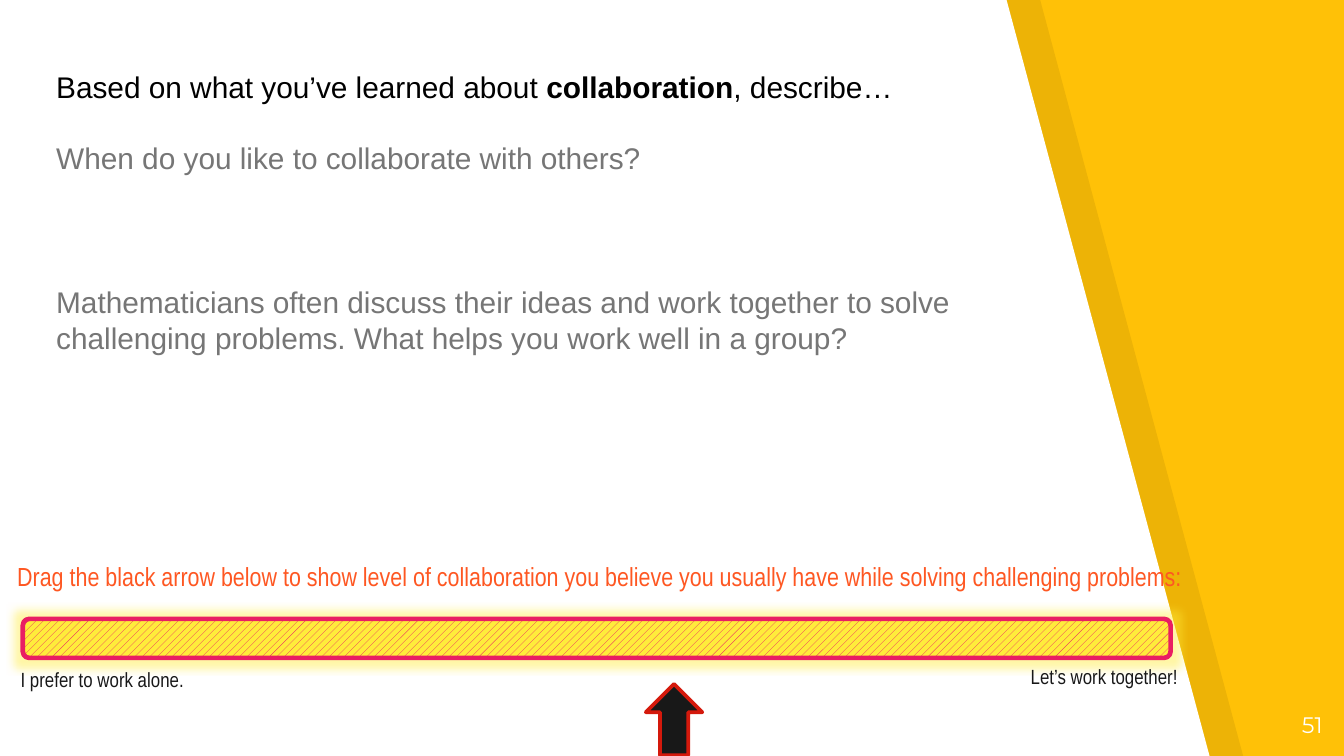
from dataclasses import dataclass

from lxml import etree
from pptx import Presentation
from pptx import util as u
from pptx.dml import color as dml_color
from pptx.enum import dml, shapes, text
from pptx.oxml import ns

# Grid: one column or row is a tenth of an inch
UNIT = u.Inches(0.1)
COLUMNS, ROWS = 100, 56.25


@dataclass(frozen=True)
class Theme:
    background: str = "FFC107"
    panel: str = "FFFFFF"
    shade: str = "000000"
    heading: str = "000000"
    question: str = "767676"
    label: str = "181818"
    instruction: str = "FE5722"
    scale_line: str = "E91E63"
    scale_fill: str = "FFEC3B"
    arrow_line: str = "D4190C"
    body_font: str = "Arial"
    narrow_font: str = "Arial Narrow"
    number_font: str = "Montserrat"
    body_size: int = 16
    instruction_size: int = 14
    number_size: int = 12
    label_size: int = 11


def rgb(value):
    return dml_color.RGBColor.from_string(value)


def grid(value):
    return u.Emu(round(value * UNIT))


def apply_format(target, values):
    for name, value in values.items():
        setattr(target, name, value)


def add_alpha(color_element, percent):
    alpha = etree.SubElement(color_element, ns.qn("a:alpha"))
    alpha.set("val", str(percent * 1000))


class SlideBuilder:
    def __init__(self, slide, theme):
        self.slide = slide
        self.theme = theme
        fill = slide.background.fill
        fill.solid()
        fill.fore_color.rgb = rgb(theme.background)

    def panel(self, points, color, opacity=100):
        start, *rest = [(grid(x), grid(y)) for x, y in points]
        builder = self.slide.shapes.build_freeform(*start)
        builder.add_line_segments(rest, close=True)
        shape = builder.convert_to_shape()
        shape.shadow.inherit = False
        shape.line.fill.background()
        shape.fill.solid()
        shape.fill.fore_color.rgb = rgb(color)
        if opacity < 100:
            add_alpha(shape._element.spPr.find(".//" + ns.qn("a:srgbClr")), opacity)

    def shape(self, kind, box, fill, line, width, pattern=None):
        shape = self.slide.shapes.add_shape(kind, *map(grid, box))
        shape.shadow.inherit = False
        if pattern:
            shape.fill.patterned()
            shape.fill.pattern = pattern
            shape.fill.fore_color.rgb = rgb(line)
            shape.fill.back_color.rgb = rgb(fill)
        else:
            shape.fill.solid()
            shape.fill.fore_color.rgb = rgb(fill)
        shape.line.color.rgb = rgb(line)
        shape.line.width = u.Pt(width)
        return shape

    def glow(self, shape, color, radius, opacity):
        effects = shape._element.spPr.find(ns.qn("a:effectLst"))
        glow = etree.SubElement(effects, ns.qn("a:glow"), rad=str(u.Pt(radius)))
        tint = etree.SubElement(glow, ns.qn("a:srgbClr"), val=color)
        add_alpha(tint, opacity)

    def text(self, box, paragraphs, font, size, frame_format=None):
        """Each paragraph is (runs, color, format); each run is (words, bold)."""
        frame = self.slide.shapes.add_textbox(*map(grid, box)).text_frame
        apply_format(frame, {"word_wrap": True, **(frame_format or {})})
        for index, (runs, color, paragraph_format) in enumerate(paragraphs):
            paragraph = frame.add_paragraph() if index else frame.paragraphs[0]
            apply_format(paragraph, paragraph_format)
            for words, bold in runs:
                run = paragraph.add_run()
                run.text = words
                apply_format(run.font, {"name": font, "size": u.Pt(size), "bold": bold})
                run.font.color.rgb = rgb(color)

    def line_of_text(self, box, words, color, font, size, frame_format=None, **paragraph_format):
        self.text(box, [([(words, False)], color, paragraph_format)], font, size, frame_format)


def main():
    theme = Theme()
    presentation = Presentation()
    presentation.slide_width = grid(COLUMNS)
    presentation.slide_height = grid(ROWS)
    page = SlideBuilder(presentation.slides.add_slide(presentation.slide_layouts[6]), theme)

    # Slanted white panel over its darker edge
    for shift, color, opacity in ((2.5, theme.shade, 7), (0, theme.panel, 100)):
        corners = [(shift, 0), (shift, ROWS), (90 + shift, ROWS), (74.9 + shift, 0)]
        page.panel(corners, color, opacity)

    # Collaboration scale with its end labels
    scale = page.shape(
        shapes.MSO_SHAPE.ROUNDED_RECTANGLE, (1.7, 46.05, 85.4, 2.9),
        theme.scale_fill, theme.scale_line, 2.5,
        pattern=dml.MSO_PATTERN.WIDE_UPWARD_DIAGONAL,
    )
    page.glow(scale, theme.scale_fill, radius=8, opacity=45)
    for left, top, words in (
        (0.55, 49.15, "I prefer to work alone."),
        (75.7, 48.95, "Let’s work together!"),
    ):
        page.line_of_text((left, top, 14.9, 2.9), words,
                          theme.label, theme.narrow_font, theme.label_size)

    # Movable arrow and its instruction
    page.shape(shapes.MSO_SHAPE.UP_ARROW, (48.05, 50.9, 4.2, 5.3),
               theme.label, theme.arrow_line, 2)
    page.line_of_text(
        (0.3, 41.2, 99.7, 3.4),
        "Drag the black arrow below to show level of collaboration you believe "
        "you usually have while solving challenging problems:",
        theme.instruction, theme.narrow_font, theme.instruction_size,
    )

    # Prompt and questions, with room to answer
    line_height = 19.2
    page.text(
        (3.2, 4.6, 71.7, 22.6),
        [
            ([("Based on what you’ve learned about ", False), ("collaboration", True),
              (", describe…", False)], theme.heading, {}),
            ([("When do you like to collaborate with others?", False)],
             theme.question, {"space_before": u.Pt(line_height)}),
            ([("Mathematicians often discuss their ideas and work together to solve "
               "challenging problems. What helps you work well in a group?", False)],
             theme.question, {"space_before": u.Pt(3 * line_height)}),
        ],
        theme.body_font, theme.body_size,
    )

    # Slide number
    inset = grid(1)
    page.line_of_text(
        (93.4, 51.9, 6, 4.3), "51", theme.panel, theme.number_font, theme.number_size,
        {"margin_top": inset, "margin_bottom": inset}, alignment=text.PP_ALIGN.RIGHT,
    )

    presentation.save("out.pptx")


if __name__ == "__main__":
    main()
